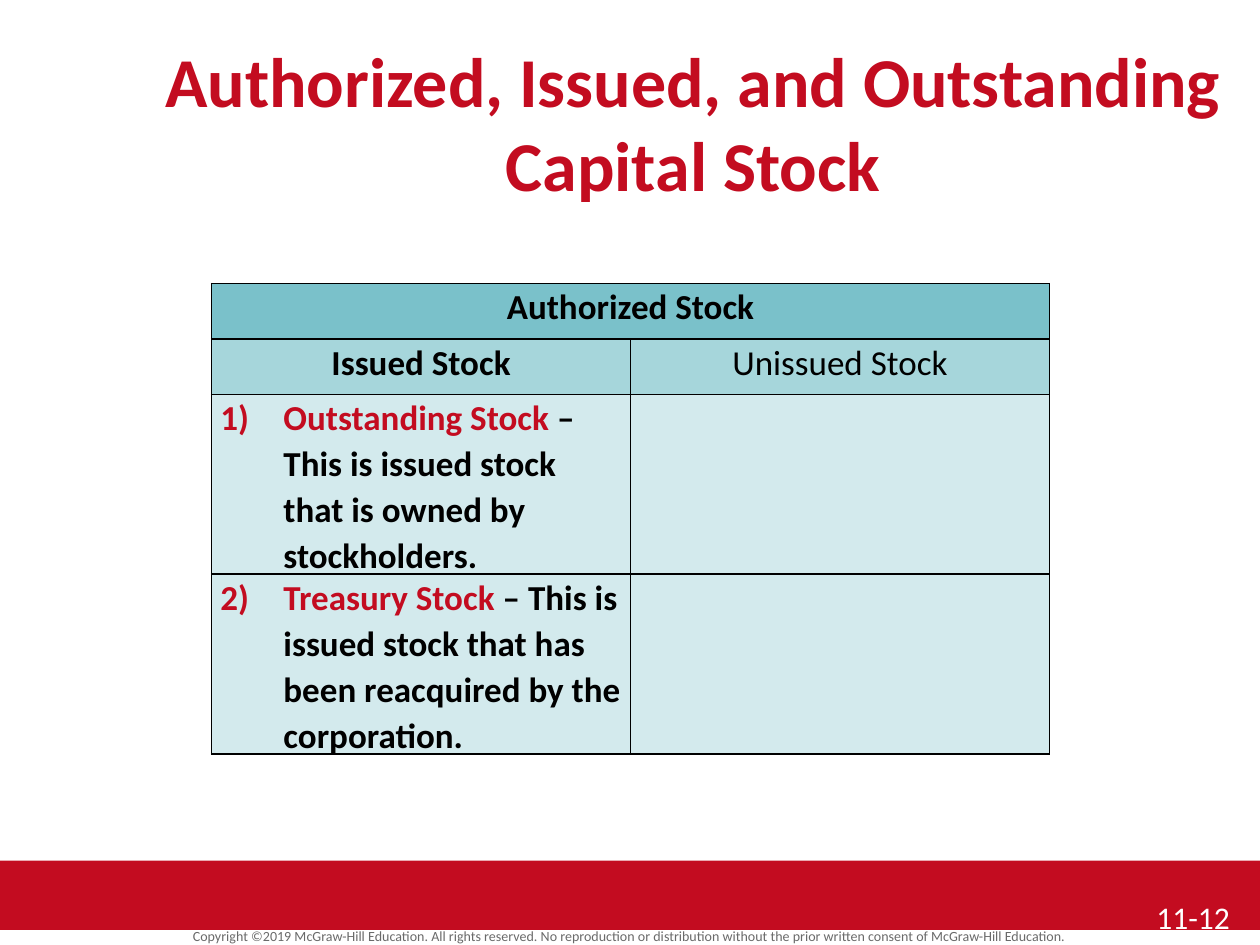
from lxml import etree
from pptx import Presentation
from pptx.dml.color import RGBColor
from pptx.enum.shapes import MSO_SHAPE
from pptx.enum.text import MSO_ANCHOR, PP_ALIGN
from pptx.oxml.ns import qn
from pptx.util import Inches, Pt

LEFT, CENTER, TOP = PP_ALIGN.LEFT, PP_ALIGN.CENTER, MSO_ANCHOR.TOP
RED, BLACK, WHITE, GREY = "C30C20", "000000", "FFFFFF", "6A6A6A"
W, H = 10, 7.5

TITLE = "Authorized, Issued, and Outstanding Capital Stock"
COPYRIGHT = ("Copyright ©2019 McGraw-Hill Education. All rights reserved. No reproduction or "
             "distribution without the prior written consent of McGraw-Hill Education.")
PAGE = "11-12"
HEADINGS = [
    (0, 0, "Authorized Stock", True),
    (1, 0, "Issued Stock", True),
    (1, 1, "Unissued Stock", False),
]
DEFINITIONS = [
    ("Outstanding Stock ", "– This is issued stock that is owned by stockholders."),
    ("Treasury Stock ", "– This is issued stock that has been reacquired by the corporation."),
]
ROWS = [(0.44, "7AC1CA"), (0.44, "A6D6DB"), (0.9, "D3EAED"), (0.9, "D3EAED")]
TABLE_LEFT, TABLE_TOP, TABLE_WIDTH = 1.68, 2.25, 6.65


def rgb(value):
    return RGBColor.from_string(value)


def write(tf, *parts, size=20, bold=False, align=CENTER, spacing=None, after=None):
    p = tf.paragraphs[0]
    p.alignment = align
    p.line_spacing = spacing
    if after is not None:
        p.space_after = Pt(after)
    for text, color in parts:
        r = p.add_run()
        r.text = text
        r.font.name, r.font.size, r.font.bold = "Calibri", Pt(size), bold
        r.font.color.rgb = rgb(color)
    return p


def add_text(s, box, text, color, **fmt):
    tf = s.shapes.add_textbox(*map(Inches, box)).text_frame
    tf.word_wrap = True
    tf.vertical_anchor = TOP
    write(tf, (text, color), **fmt)


def number(p, start):
    pPr = p._p.get_or_add_pPr()
    pPr.set("marL", str(Inches(0.5)))
    pPr.set("indent", str(-Inches(0.5)))
    color = etree.SubElement(pPr, qn("a:buClr"))
    etree.SubElement(color, qn("a:srgbClr"), val=RED)
    etree.SubElement(pPr, qn("a:buAutoNum"), type="arabicParenR", startAt=str(start))


def style_cell(cell, fill):
    tcPr = cell._tc.get_or_add_tcPr()
    for side in ("lnL", "lnR", "lnT", "lnB"):
        ln = etree.SubElement(tcPr, qn("a:" + side), w=str(Pt(1)))
        solid = etree.SubElement(ln, qn("a:solidFill"))
        etree.SubElement(solid, qn("a:srgbClr"), val=BLACK)
    cell.fill.solid()
    cell.fill.fore_color.rgb = rgb(fill)
    cell.margin_left = cell.margin_right = Inches(0.07)
    cell.margin_top = cell.margin_bottom = 0


def add_stock_table(s):
    box = TABLE_LEFT, TABLE_TOP, TABLE_WIDTH, sum(h for h, _ in ROWS)
    table = s.shapes.add_table(len(ROWS), 2, *map(Inches, box)).table
    table.first_row = table.horz_banding = False
    for i, (height, fill) in enumerate(ROWS):
        table.rows[i].height = Inches(height)
        for cell in table.rows[i].cells:
            style_cell(cell, fill)
    table.cell(0, 0).merge(table.cell(0, 1))
    body = dict(spacing=1.07, after=8)
    for row, col, text, bold in HEADINGS:
        write(table.cell(row, col).text_frame, (text, BLACK), bold=bold, **body)
    for i, (term, meaning) in enumerate(DEFINITIONS, 1):
        tf = table.cell(i + 1, 0).text_frame
        p = write(tf, (term, RED), (meaning, BLACK), bold=True, align=LEFT, **body)
        number(p, i)


def main():
    prs = Presentation()
    prs.slide_width, prs.slide_height = Inches(W), Inches(H)
    s = prs.slides.add_slide(prs.slide_layouts[6])

    band = s.shapes.add_shape(MSO_SHAPE.RECTANGLE, 0, Inches(6.83), Inches(W), Inches(0.55))
    band.shadow.inherit = False
    band.fill.solid()
    band.fill.fore_color.rgb = rgb(RED)
    band.line.fill.background()

    add_text(s, (0, 7.34, W, 0.19), COPYRIGHT, GREY, size=8, spacing=0.8)
    add_text(s, (1, 0.25, W - 1, 0.67), TITLE, RED, size=40, bold=True)
    add_text(s, (9.08, 7.08, 0.92, 0.42), PAGE, WHITE, size=18, align=LEFT)
    add_stock_table(s)
    prs.save("out.pptx")


if __name__ == "__main__":
    main()
